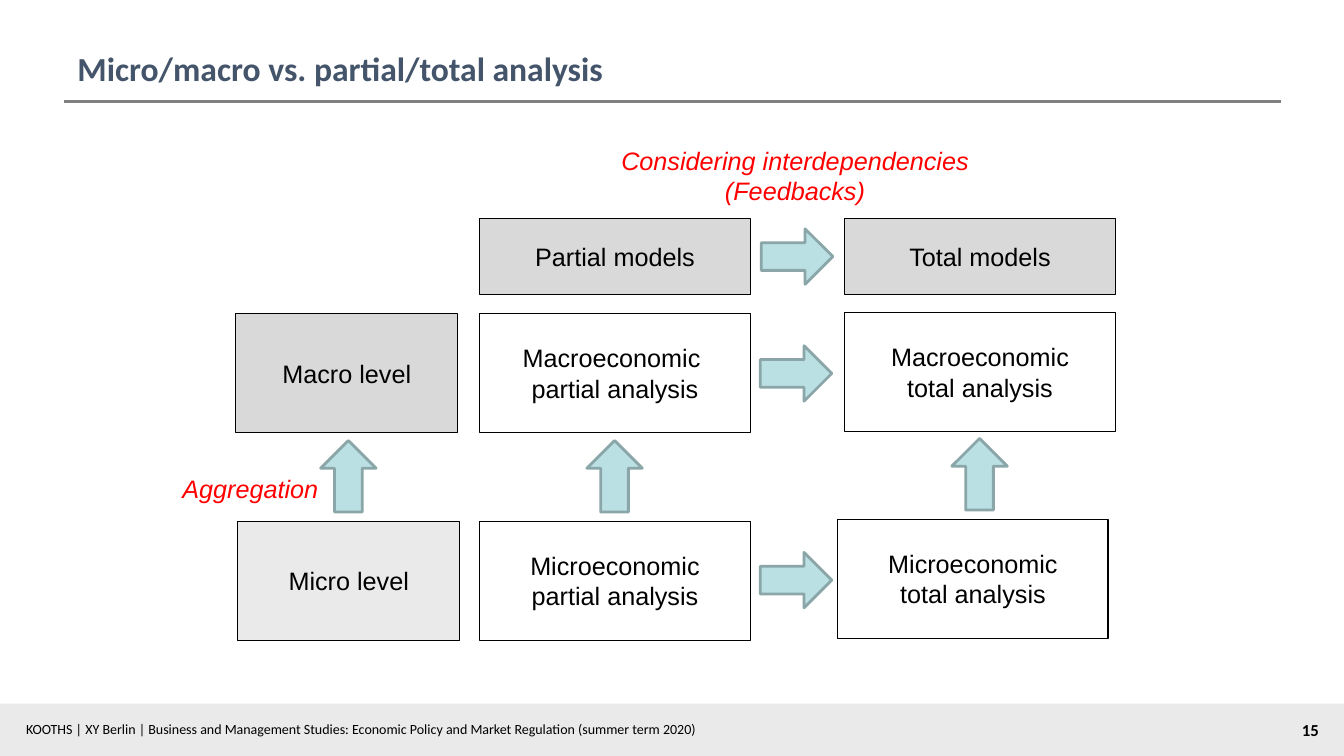
from dataclasses import dataclass

from lxml.etree import SubElement
from pptx import Presentation
from pptx.dml.color import RGBColor
from pptx.enum.shapes import MSO_CONNECTOR as Connector, MSO_SHAPE as Preset
from pptx.enum.text import MSO_ANCHOR as Anchor, PP_ALIGN as Align
from pptx.oxml.ns import qn
from pptx.util import Inches, Pt

BLACK, RED, GREY, LIGHT_GREY = "000000", "FF0000", "D9D9D9", "EAEAEA"


@dataclass
class Label:
    text: str
    left: float
    top: float
    width: float
    height: float
    size: float = 18
    font: str = "Arial"
    color: str = BLACK
    bold: bool = False
    italic: bool = False
    align: Align = Align.LEFT
    anchor: Anchor = Anchor.TOP


@dataclass
class Box:
    text: str
    left: float
    top: float
    width: float = 2.68
    height: float = 1.18
    fill: str | None = None


@dataclass
class Arrow:
    left: float
    top: float
    upward: bool = False


def rgb(value: str) -> RGBColor:
    return RGBColor.from_string(value)


def write(shape, label: Label) -> None:
    frame = shape.text_frame
    frame.word_wrap = True
    frame.vertical_anchor = label.anchor
    paragraph = frame.paragraphs[0]
    paragraph.alignment = label.align
    for index, line in enumerate(label.text.split("\n")):
        if index:
            paragraph.add_line_break()
        run = paragraph.add_run()
        run.text = line
        run.font.name = label.font
        run.font.size = Pt(label.size)
        run.font.bold = label.bold
        run.font.italic = label.italic
        run.font.color.rgb = rgb(label.color)


def add_label(slide, label: Label) -> None:
    bounds = map(Inches, (label.left, label.top, label.width, label.height))
    write(slide.shapes.add_textbox(*bounds), label)


def add_preset(slide, preset: Preset, left: float, top: float, width: float, height: float,
               fill: str | None, line: str | None = None, weight: float = 0.75):
    shape = slide.shapes.add_shape(preset, *map(Inches, (left, top, width, height)))
    shape.shadow.inherit = False
    if fill:
        shape.fill.solid()
        shape.fill.fore_color.rgb = rgb(fill)
    else:
        shape.fill.background()
    if line:
        shape.line.color.rgb = rgb(line)
        shape.line.width = Pt(weight)
    else:
        shape.line.fill.background()
    return shape


def add_box(slide, box: Box) -> None:
    bounds = (box.left, box.top, box.width, box.height)
    shape = add_preset(slide, Preset.RECTANGLE, *bounds, box.fill, BLACK)
    write(shape, Label(box.text, *bounds, align=Align.CENTER, anchor=Anchor.MIDDLE))


def add_arrow(slide, arrow: Arrow) -> None:
    preset, size = ((Preset.UP_ARROW, (0.55, 0.71)) if arrow.upward
                    else (Preset.RIGHT_ARROW, (0.71, 0.55)))
    add_preset(slide, preset, arrow.left, arrow.top, *size, "BBE0E3", "8AA6A8", 2)


def add_rule(slide, left: float, right: float, top: float) -> None:
    rule = slide.shapes.add_connector(
        Connector.STRAIGHT, Inches(left), Inches(top), Inches(right), Inches(top))
    rule.line.color.rgb = rgb("808080")
    rule.line.width = Pt(2.25)
    SubElement(rule.element.spPr, qn("a:effectLst"))


LABELS = [
    Label("Micro/macro vs. partial/total analysis", 0.67, 0.21, 12, 0.71, 24, "Calibri",
          "44546A", bold=True, anchor=Anchor.BOTTOM),
    Label("KOOTHS | XY Berlin | Business and Management Studies: "
          "Economic Policy and Market Regulation (summer term 2020)",
          0.16, 7.1, 10.17, 0.27, 10, "Calibri"),
    Label("15", 11.08, 7.09, 2.1, 0.3, 12, "Calibri", bold=True, align=Align.RIGHT),
    Label("Aggregation", 1.71, 4.65, 1.89, 0.4, color=RED, italic=True),
    Label("Considering interdependencies\n(Feedbacks)", 5.64, 1.39, 4.49, 0.71,
          color=RED, italic=True, align=Align.CENTER),
]

BOXES = [
    Box("Macro level", 2.34, 3.11, width=2.2, fill=GREY),
    Box("Micro level", 2.36, 5.17, width=2.2, fill=LIGHT_GREY),
    Box("Partial models", 4.76, 2.17, height=0.75, fill=GREY),
    Box("Total models", 8.38, 2.17, height=0.75, fill=GREY),
    Box("Macroeconomic \npartial analysis", 4.76, 3.11),
    Box("Macroeconomic\ntotal analysis", 8.38, 3.1),
    Box("Microeconomic\npartial analysis", 4.76, 5.17),
    Box("Microeconomic\ntotal analysis", 8.31, 5.15),
]

ARROWS = [
    Arrow(7.55, 2.27),
    Arrow(7.54, 3.43),
    Arrow(7.54, 5.48),
    Arrow(3.18, 4.37, upward=True),
    Arrow(5.82, 4.37, upward=True),
    Arrow(9.44, 4.35, upward=True),
]


def main() -> None:
    presentation = Presentation()
    presentation.slide_width = Inches(13.33)
    presentation.slide_height = Inches(7.5)
    slide = presentation.slides.add_slide(presentation.slide_layouts[6])

    # Footer band and title rule
    add_preset(slide, Preset.RECTANGLE, 0, 6.98, 13.33, 0.52, LIGHT_GREY)
    add_rule(slide, 0.63, 12.71, 1.01)

    # Matrix of models and levels
    for box in BOXES:
        add_box(slide, box)
    for arrow in ARROWS:
        add_arrow(slide, arrow)

    # Title, footer and annotations
    for label in LABELS:
        add_label(slide, label)

    presentation.save("out.pptx")


if __name__ == "__main__":
    main()
